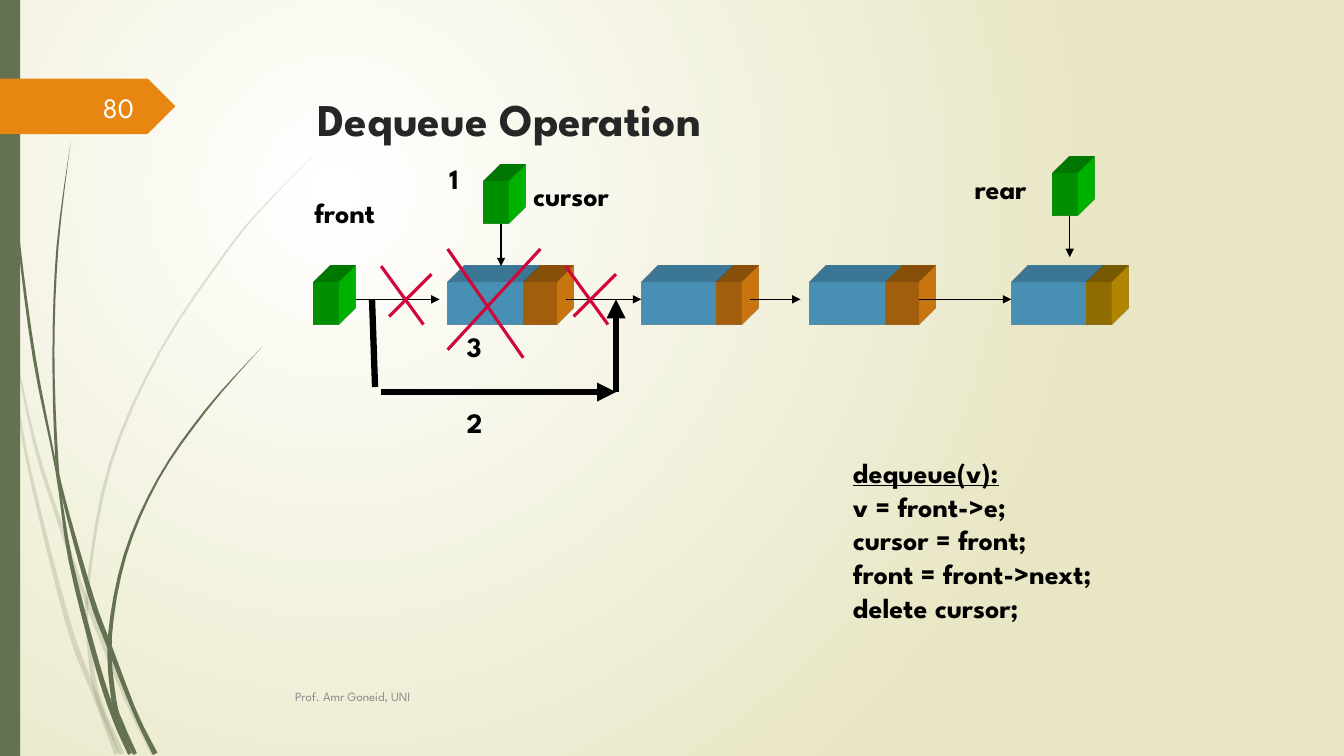
"""Build the "Dequeue Operation" slide: a linked queue with its front node removed."""
from dataclasses import dataclass
from math import hypot
from typing import NamedTuple

from lxml import etree
from pptx import Presentation
from pptx import util as u
from pptx.dml.color import RGBColor
from pptx.enum import shapes, text
from pptx.oxml import ns


@dataclass(frozen=True)
class Theme:
    font: str = "League Spartan"
    title_size: float = 32.4
    body_size: float = 20
    footer_size: float = 9
    title: str = "262626"
    ink: str = "000000"
    footer: str = "8C8C8C"
    number: str = "FEFFFF"
    centre: str = "FFFFFF"
    edge: str = "E8E6C4"
    grass: str = "647252"
    tag: str = "E78712"
    data: str = "66CCFF"
    link: str = "E78712"
    last_link: str = "CC9900"
    pointer: str = "00CC00"
    cross: str = "CF073B"


class Box(NamedTuple):
    x: float
    y: float
    w: float
    color: str


class Line(NamedTuple):
    x1: float
    y1: float
    x2: float
    y2: float
    weight: float
    arrow: bool = True


class Label(NamedTuple):
    x: float
    y: float
    w: float
    words: str


T = Theme()
ROW, MID, HIGH, DEPTH, DATA_W = 2.8, 2.97, 0.42, 0.47, 0.75

PALE_STEMS = [
    [(.02, 2.92, .03), (.1, 3.46, .01), (.16, 3.9, .02), (.3, 4.7, .03), (.68, 6.2, .05),
     (.94, 6.89, .05), (1.16, 7.48, .05)],
    [(.14, 3.45, .01), (.35, 4.42, .03), (.6, 5.21, .04), (.86, 5.97, .04), (1.25, 6.93, .04),
     (1.52, 7.48, .04)],
    [(3.12, 1.53, 0), (2.68, 1.98, .01), (2.28, 2.45, .02), (1.59, 3.48, .02), (1.09, 4.62, .03),
     (.87, 5.84, .03), (.89, 6.46, .04), (.98, 6.95, .05), (1.21, 7.48, .05)],
]
DARK_STEMS = [
    [(.04, 0, .01), (.07, 1.1, .01), (.18, 2.33, .02), (.34, 3.55, .03), (.56, 4.67, .02),
     (.7, 5.56, .04), (.96, 6.58, .05), (1.14, 7.13, .05), (1.29, 7.48, .04)],
    [(.7, 1.41, 0), (.57, 2.45, .02), (.53, 3.49, .02), (.56, 4.5, .03), (.62, 4.9, .03),
     (.9, 5.91, .05), (1.08, 6.4, .05), (1.34, 7.07, .04), (1.54, 7.48, .05)],
    [(2.6, 3.44, 0), (2.05, 4.06, .02), (1.57, 4.75, .02), (1.24, 5.51, .03), (1.09, 6.32, .04),
     (1.13, 6.95, .05), (1.21, 7.2, .05), (1.34, 7.48, .04)],
]
NODES = [(4.44, .33, T.link), (6.36, .25, T.link), (8.03, .33, T.link), (10.03, .25, T.last_link)]
POINTERS = [(3.11, ROW), (4.8, 1.8), (10.44, 1.72)]
ARROWS = [
    Line(3.44, MID, 4.36, MID, .75), Line(5.61, MID, 6.36, MID, 1), Line(7.44, MID, 7.94, MID, 1),
    Line(9.11, MID, 10.03, MID, .75), Line(4.97, 2.22, 4.97, 2.64, 1),
    Line(10.61, 2.14, 10.61, 2.55, 1), Line(3.69, MID, 3.72, 3.84, 4.5, False),
    Line(3.78, 3.89, 6.11, 3.89, 4.5), Line(6.11, 3.89, 6.11, MID, 4.5),
]
CROSSES = [Line(4.44, 2.47, 5.19, 3.55, 2.25, False), Line(5.36, 2.47, 4.44, 3.47, 2.25, False)]
for left in (3.78, 5.61):
    CROSSES += [Line(left, 2.64, left + .42, 3.22, 2.25, False),
                Line(left + .5, 2.72, left + .08, 3.14, 2.25, False)]
LABELS = [Label(4.36, 1.55, .36, "1"), Label(4.53, 3.97, .36, "2"), Label(4.53, 3.22, .36, "3"),
          Label(5.19, 1.72, 1.03, "cursor"), Label(3.02, 1.89, .8, "front"),
          Label(9.57, 1.65, .75, "rear")]
CODE = ["dequeue(v):", "v = front->e;", "cursor = front;", "front = front->next;", "delete cursor;"]


def paint(sp, color: str, alpha: int = 100) -> None:
    sp.shadow.inherit = False
    sp.line.fill.background()
    sp.fill.solid()
    sp.fill.fore_color.rgb = RGBColor.from_string(color)
    if alpha < 100:
        clr = sp._element.spPr.find(".//" + ns.qn("a:srgbClr"))
        etree.SubElement(clr, ns.qn("a:alpha"), val=str(alpha * 1000))


def preset(s, kind, x: float, y: float, w: float, h: float, color: str):
    sp = s.shapes.add_shape(kind, *map(u.Inches, (x, y, w, h)))
    paint(sp, color)
    return sp


def smooth(knots: list, steps: int = 4) -> list:
    ends = [knots[0], *knots, knots[-1]]
    curve = []
    for a, b, c, d in zip(ends, ends[1:], ends[2:], ends[3:]):
        for t in (i / steps for i in range(steps)):
            curve.append(tuple(
                q + t * ((r - p) + t * ((2 * p - 5 * q + 4 * r - v) + t * (3 * q - p - 3 * r + v))) / 2
                for p, q, r, v in zip(a, b, c, d)))
    return curve + [knots[-1]]


def stem(s, knots: list, alpha: int) -> None:
    curve = smooth(knots)
    near, far = [], []
    for i, (x, y, w) in enumerate(curve):
        a, b = curve[max(i - 1, 0)], curve[min(i + 1, len(curve) - 1)]
        dx, dy = b[0] - a[0], b[1] - a[1]
        k = w / 2 / hypot(dx, dy)
        near.append((x - dy * k, max(y + dx * k, 0)))
        far.append((x + dy * k, max(y - dx * k, 0)))
    start, *rest = [(u.Inches(x), u.Inches(y)) for x, y in near + far[::-1]]
    fb = s.shapes.build_freeform(*start)
    fb.add_line_segments(rest, close=True)
    paint(fb.convert_to_shape(), T.grass, alpha)


def block(s, b: Box) -> None:
    sp = preset(s, shapes.MSO_SHAPE.RECTANGLE, b.x, b.y, b.w, HIGH, b.color)
    scene = etree.SubElement(sp._element.spPr, ns.qn("a:scene3d"))
    etree.SubElement(scene, ns.qn("a:camera"), prst="legacyObliqueTopRight")
    etree.SubElement(scene, ns.qn("a:lightRig"), rig="legacyFlat3", dir="b")
    solid = etree.SubElement(sp._element.spPr, ns.qn("a:sp3d"),
                             extrusionH=str(u.Inches(DEPTH)), prstMaterial="legacyMatte")
    for bevel in ("a:bevelT", "a:bevelB"):
        etree.SubElement(solid, ns.qn(bevel), w="13500", h="13500", prst="angle")
    side = etree.SubElement(solid, ns.qn("a:extrusionClr"))
    etree.SubElement(side, ns.qn("a:srgbClr"), val=b.color)


def connect(s, ln: Line, color: str) -> None:
    cx = s.shapes.add_connector(shapes.MSO_CONNECTOR.STRAIGHT, *map(u.Inches, ln[:4]))
    cx.line.color.rgb = RGBColor.from_string(color)
    cx.line.width = u.Pt(ln.weight)
    if ln.arrow:
        etree.SubElement(cx.line._get_or_add_ln(), ns.qn("a:tailEnd"), type="triangle")
    etree.SubElement(cx._element.spPr, ns.qn("a:effectLst"))


def style(p, size: float, color: str, bold: bool = False) -> None:
    p.font.name, p.font.size, p.font.bold = T.font, u.Pt(size), bold
    p.font.color.rgb = RGBColor.from_string(color)


def write(s, x: float, y: float, w: float, h: float, lines: list, size: float, color: str,
          bold: bool = False, wrap: bool = True, anchor=text.MSO_ANCHOR.TOP):
    tf = s.shapes.add_textbox(*map(u.Inches, (x, y, w, h))).text_frame
    tf.word_wrap, tf.vertical_anchor = wrap, anchor
    tf.text = "\n".join(lines)
    for p in tf.paragraphs:
        style(p, size, color, bold)
    return tf


def backdrop(s) -> None:
    fill = s.background.fill
    fill.gradient()
    for stop, color in zip(fill.gradient_stops, (T.centre, T.edge)):
        stop.color.rgb = RGBColor.from_string(color)
    grad = s.element.find(".//" + ns.qn("a:gradFill"))
    grad.remove(grad.find(ns.qn("a:lin")))
    circle = etree.SubElement(grad, ns.qn("a:path"), path="circle")
    etree.SubElement(circle, ns.qn("a:fillToRect"), l="50000", t="50000", r="100000", b="100000")
    for stems, alpha in ((PALE_STEMS, 20), (DARK_STEMS, 100)):
        for knots in stems:
            stem(s, knots, alpha)
    preset(s, shapes.MSO_SHAPE.RECTANGLE, 0, 0, .2, 7.5, T.grass)
    preset(s, shapes.MSO_SHAPE.PENTAGON, 0, .78, 1.74, .55, T.tag)


def main() -> None:
    prs = Presentation()
    prs.slide_width, prs.slide_height = u.Inches(13.33), u.Inches(7.5)
    s = prs.slides.add_slide(prs.slide_layouts[5])
    backdrop(s)
    sp = s.shapes.title
    sp.left, sp.top, sp.width, sp.height = map(u.Inches, (3.05, .85, 8.38, .6))
    tf = sp.text_frame
    tf.text, tf.vertical_anchor = "Dequeue Operation", text.MSO_ANCHOR.TOP
    tf.auto_size = text.MSO_AUTO_SIZE.NONE
    tf.paragraphs[0].alignment = text.PP_ALIGN.LEFT
    style(tf.paragraphs[0], T.title_size, T.title, True)
    middle = text.MSO_ANCHOR.MIDDLE
    write(s, 2.83, 6.71, 8.33, .4, ["Prof. Amr Goneid, UNI"], T.footer_size, T.footer, anchor=middle)
    tf = write(s, .58, .86, .85, .4, ["80"], T.body_size, T.number, anchor=middle)
    tf.paragraphs[0].alignment = text.PP_ALIGN.RIGHT
    for x, link_w, color in NODES:
        block(s, Box(x, ROW, DATA_W, T.data))
        block(s, Box(x + DATA_W, ROW, link_w, color))
    for lines, color in ((ARROWS, T.ink), (CROSSES, T.cross)):
        for ln in lines:
            connect(s, ln, color)
    for x, y in POINTERS:
        block(s, Box(x, y, .25, T.pointer))
    for x, y, w, words in LABELS:
        write(s, x, y, w, .44, [words], T.body_size, T.ink, True, wrap=False)
    tf = write(s, 7.86, 4.47, 3.81, 1.78, CODE, T.body_size, T.ink, True)
    tf.margin_left = u.Inches(.6)
    tf.paragraphs[0].font.underline = True
    prs.save("out.pptx")


if __name__ == "__main__":
    main()
